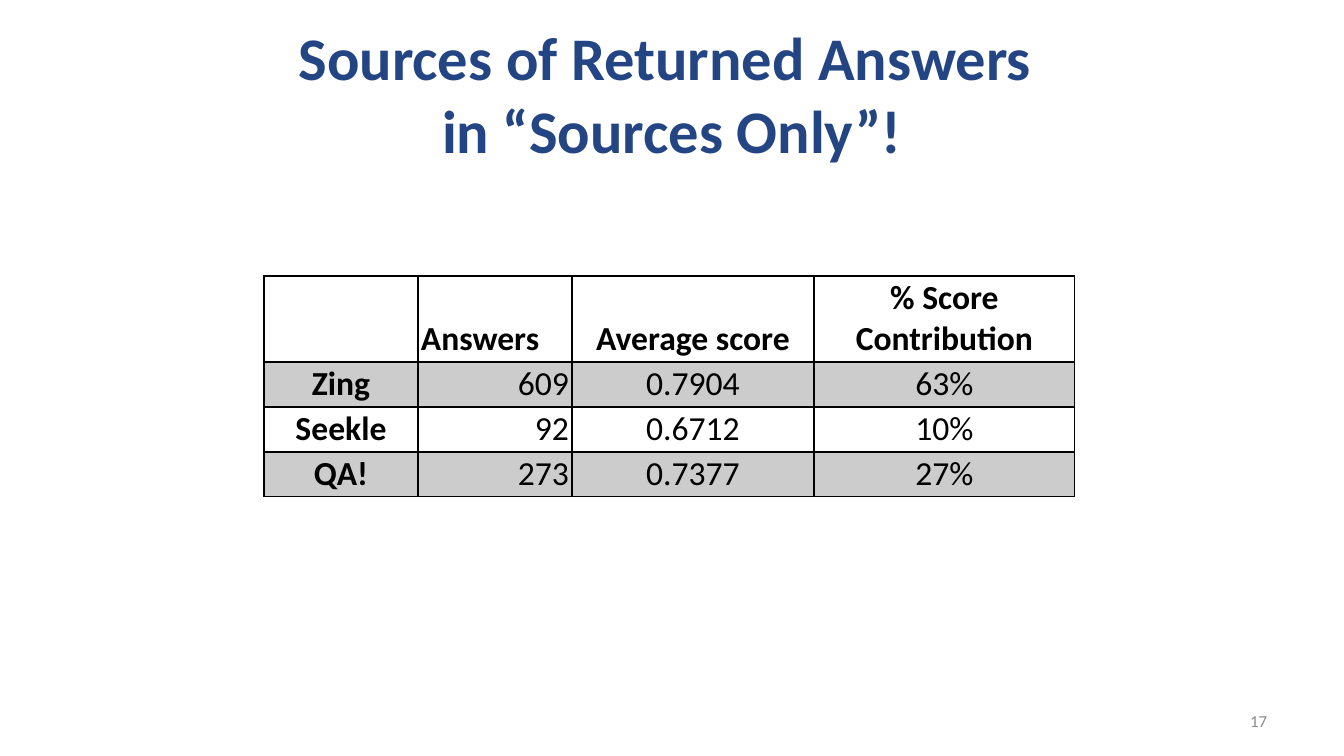
from lxml.etree import SubElement
from pptx import Presentation
from pptx.dml.color import RGBColor
from pptx.enum.text import MSO_ANCHOR, PP_ALIGN
from pptx.oxml.ns import qn
from pptx.util import Pt

EMU_PER_PX = 914400 / 100.8
COLORS = {"title": "244583", "ink": "000000", "band": "CCCCCC", "number": "8C8C8C"}
COLUMN_WIDTHS = [154, 154, 242, 261]
ROW_HEIGHTS = [86, 45, 45, 45]
SCORES = [
    ["", "Answers", "Average score", "% Score Contribution"],
    ["Zing", "609", "0.7904", "63%"],
    ["Seekle", "92", "0.6712", "10%"],
    ["QA!", "273", "0.7377", "27%"],
]


def px(length):
    return round(length * EMU_PER_PX)


def write(frame, text, size, color="ink", bold=False, align=PP_ALIGN.CENTER):
    frame.word_wrap = True
    paragraph = frame.paragraphs[0]
    paragraph.text = text
    paragraph.alignment = align
    for run in paragraph.runs:
        run.font.name = "Calibri"
        run.font.size = Pt(size)
        run.font.bold = bold
        run.font.color.rgb = RGBColor.from_string(COLORS[color])


def add_label(slide, box, text, **style):
    frame = slide.shapes.add_textbox(*map(px, box)).text_frame
    frame.vertical_anchor = MSO_ANCHOR.MIDDLE
    write(frame, text, **style)


def set_borders(cell, **widths):
    properties = cell._tc.get_or_add_tcPr()
    for side in "LRTB":
        line = SubElement(properties, qn(f"a:ln{side}"), w=str(Pt(widths.get(side, 1))))
        fill = SubElement(line, qn("a:solidFill"))
        SubElement(fill, qn("a:srgbClr"), val=COLORS["ink"])


def fill_cell(cell, text, row, column):
    if row == 0:
        set_borders(cell, B=2)
    else:
        set_borders(cell, T=2 if row == 1 else 1)
    if row % 2:
        cell.fill.solid()
        cell.fill.fore_color.rgb = RGBColor.from_string(COLORS["band"])
    else:
        cell.fill.background()
    cell.margin_left = cell.margin_right = px(3)
    cell.margin_top = cell.margin_bottom = px(2)
    cell.vertical_anchor = MSO_ANCHOR.BOTTOM
    align = PP_ALIGN.CENTER
    if column == 1:
        align = PP_ALIGN.RIGHT if row else PP_ALIGN.LEFT
    write(cell.text_frame, text, size=24, bold=row == 0 or column == 0, align=align)


def add_score_table(slide, left, top):
    box = (left, top, sum(COLUMN_WIDTHS), sum(ROW_HEIGHTS))
    table = slide.shapes.add_table(len(SCORES), len(SCORES[0]), *map(px, box)).table
    table.first_row = table.horz_banding = False
    for column, width in zip(table.columns, COLUMN_WIDTHS):
        column.width = px(width)
    for row, height in zip(table.rows, ROW_HEIGHTS):
        row.height = px(height)
    for row, values in enumerate(SCORES):
        for column, value in enumerate(values):
            fill_cell(table.cell(row, column), value, row, column)


def main():
    presentation = Presentation()
    presentation.slide_width, presentation.slide_height = px(1344), px(756)
    slide = presentation.slides.add_slide(presentation.slide_layouts[6])
    add_label(slide, (67, 30, 1210, 126),
              "Sources of Returned Answers \vin “Sources Only”!",
              size=43.2, color="title", bold=True)
    add_score_table(slide, 264, 276)
    add_label(slide, (964, 701, 313, 40), "17",
              size=12, color="number", align=PP_ALIGN.RIGHT)
    presentation.save("out.pptx")


if __name__ == "__main__":
    main()
